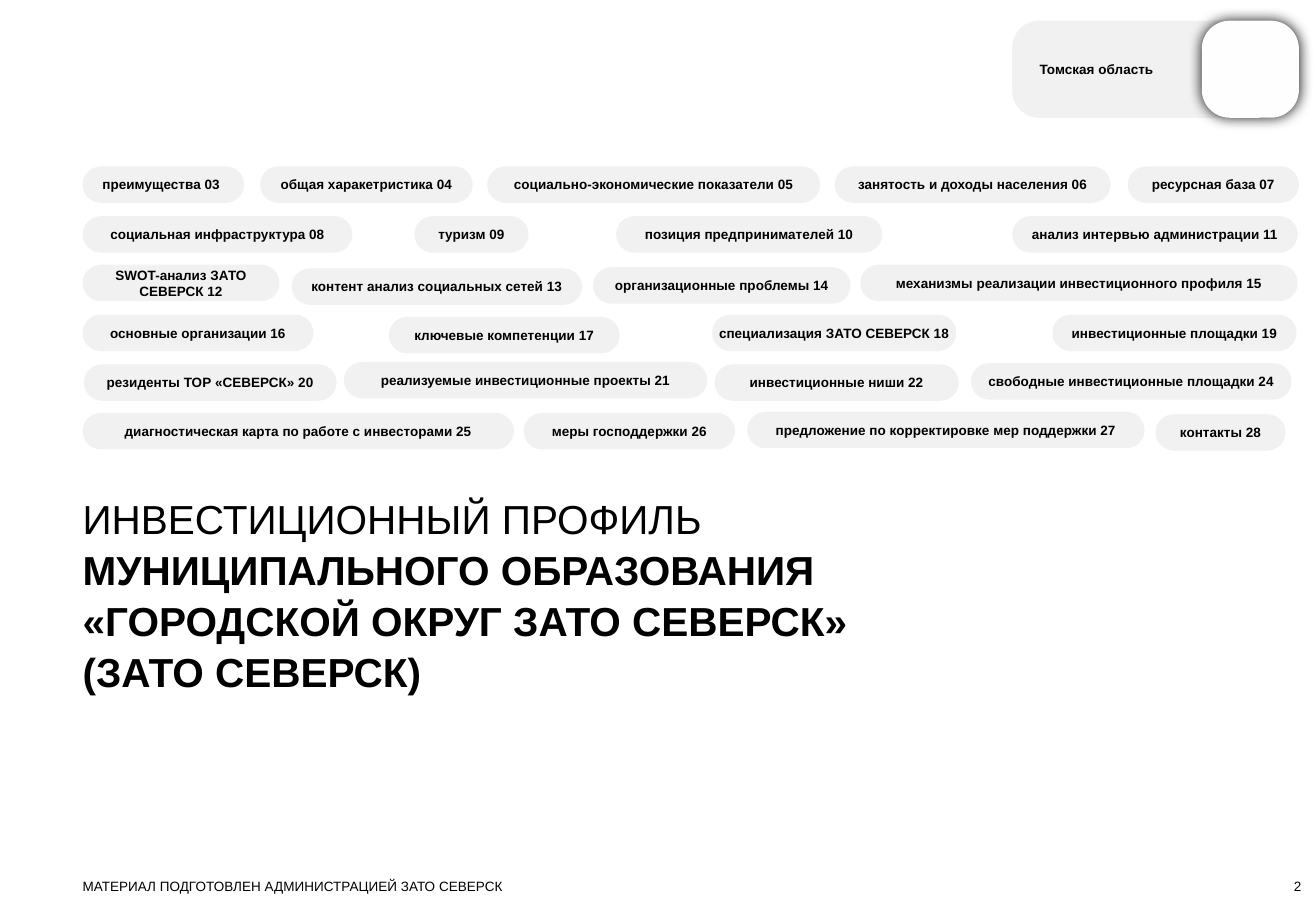
"""Builds the contents slide of a municipal investment profile."""
from dataclasses import dataclass

from lxml.etree import SubElement as Sub
from pptx import Presentation as Deck
from pptx.dml.color import RGBColor as Color
from pptx.enum.shapes import MSO_SHAPE as Shape
from pptx.enum.text import MSO_ANCHOR as Anchor, MSO_AUTO_SIZE as Fit, PP_ALIGN as Align
from pptx.oxml.ns import qn
from pptx.util import Inches, Pt


@dataclass(frozen=True)
class Theme:
    """Colours, font and type sizes."""
    font: str = "Arial"
    ink: str = "000000"
    pill: str = "F1F1F1"
    tile: str = "FEFEFE"
    small: int = 8
    large: int = 24


class Page:
    """Draws styled elements on one slide."""

    def __init__(self, deck, theme):
        """Adds a title-only slide."""
        self.theme = theme
        self.slide = deck.slides.add_slide(deck.slide_layouts[5])

    def style(self, font, size, bold):
        """Sets face, size, weight and colour."""
        font.name, font.size, font.bold = self.theme.font, Pt(size), bold
        font.color.rgb = Color.from_string(self.theme.ink)

    def frame(self, shape, anchor, pad=(0, 0, 0, 0)):
        """Sets wrapping, anchor and margins, and returns the text frame."""
        frame = shape.text_frame
        frame.word_wrap, frame.auto_size = True, Fit.NONE
        frame.vertical_anchor = anchor
        (frame.margin_left, frame.margin_top,
         frame.margin_right, frame.margin_bottom) = map(Inches, pad)
        return frame

    def fill(self, shape, text, align, anchor, bold=False, pad=(0, 0, 0, 0)):
        """Fills a shape with one small paragraph."""
        line = self.frame(shape, anchor, pad).paragraphs[0]
        line.text, line.alignment = text, align
        self.style(line.font, self.theme.small, bold)

    def block(self, box, paint, round):
        """Adds a plain rounded rectangle."""
        shape = self.slide.shapes.add_shape(Shape.ROUNDED_RECTANGLE, *map(Inches, box))
        shape.adjustments[0] = round
        shape.shadow.inherit = False
        shape.fill.solid()
        shape.fill.fore_color.rgb = Color.from_string(paint)
        shape.line.fill.background()
        return shape

    def label(self, box, text, align=Align.CENTER, pad=(0, 0, 0, 0), round=0.5):
        """Adds a grey block with a bold caption."""
        shape = self.block(box, self.theme.pill, round)
        self.fill(shape, text, align, Anchor.MIDDLE, True, pad)

    def tile(self, box, round):
        """Adds a light tile with a soft shadow."""
        shape = self.block(box, self.theme.tile, round)
        effects = shape.element.spPr.find(qn("a:effectLst"))
        shade = Sub(effects, qn("a:outerShdw"), blurRad=str(Pt(8.4)), dist="0",
                    dir="0", algn="ctr", rotWithShape="0")
        tint = Sub(shade, qn("a:srgbClr"), val=self.theme.ink)
        Sub(tint, qn("a:alpha"), val="92000")

    def note(self, box, text, align, anchor):
        """Adds a small text box."""
        shape = self.slide.shapes.add_textbox(*map(Inches, box))
        self.fill(shape, text, align, anchor)

    def title(self, box, light, strong):
        """Fills the title with a light line and a bold part."""
        shape = self.slide.shapes.title
        shape.left, shape.top, shape.width, shape.height = map(Inches, box)
        line = self.frame(shape, Anchor.TOP).paragraphs[0]
        line.alignment, line.line_spacing = Align.LEFT, 1.05
        for text, bold in ((light, False), (strong, True)):
            if bold:
                line.add_line_break()
            run = line.add_run()
            run.text = text
            self.style(run.font, self.theme.large, bold)


LEFT = 0.68
PILL = 0.3
TOPICS = [
    (2.14, 1.37, 1.75, "общая харакетристика 04"),
    (4.01, 1.37, 2.74, "социально-экономические показатели 05"),
    (6.87, 1.37, 2.27, "занятость и доходы населения 06"),
    (9.28, 1.37, 1.41, "ресурсная база 07"),
    (LEFT, 1.78, 2.22, "социальная инфраструктура 08"),
    (3.41, 1.78, 0.94, "туризм 09"),
    (5.07, 1.78, 2.19, "позиция предпринимателей 10"),
    (8.33, 1.78, 2.35, "анализ интервью администрации 11"),
    (LEFT, 2.18, 1.62, "SWOT-анализ ЗАТО СЕВЕРСК 12"),
    (2.4, 2.21, 2.39, "контент анализ социальных сетей 13"),
    (4.88, 2.2, 2.12, "организационные проблемы 14"),
    (7.08, 2.18, 3.6, "механизмы реализации инвестиционного профиля 15"),
    (LEFT, 2.59, 1.9, "основные организации 16"),
    (3.2, 2.61, 1.9, "ключевые компетенции 17"),
    (5.86, 2.59, 2.01, "специализация ЗАТО СЕВЕРСК 18"),
    (8.66, 2.59, 2.01, "инвестиционные площадки 19"),
    (0.69, 3, 2.08, "резиденты ТОР «СЕВЕРСК» 20"),
    (2.83, 2.98, 2.99, "реализуемые инвестиционные проекты 21"),
    (5.88, 3, 2.01, "инвестиционные ниши 22"),
    (7.99, 2.99, 2.64, "свободные инвестиционные площадки 24"),
    (LEFT, 3.4, 3.55, "диагностическая карта по работе с инвесторами 25"),
    (4.31, 3.4, 1.74, "меры господдержки 26"),
    (6.15, 3.39, 3.27, "предложение по корректировке мер поддержки 27"),
    (9.51, 3.41, 1.07, "контакты 28"),
]


def main():
    """Builds and saves the deck."""
    deck = Deck()
    deck.slide_width, deck.slide_height = Inches(10.83), Inches(7.5)
    page = Page(deck, Theme())
    page.title((LEFT, 4.05, 7.24, 1.62), "ИНВЕСТИЦИОННЫЙ ПРОФИЛЬ",
               "МУНИЦИПАЛЬНОГО ОБРАЗОВАНИЯ «ГОРОДСКОЙ ОКРУГ ЗАТО СЕВЕРСК» (ЗАТО СЕВЕРСК)")
    page.label((LEFT, 1.37, 1.33, PILL), "преимущества 03", Align.LEFT, (0.12, 0, 0, 0))
    for left, top, width, text in TOPICS:
        page.label((left, top, width, PILL), text)
    page.label((8.33, 0.17, 2.36, 0.8), "Томская область", Align.LEFT,
               (0.16, 0.05, 0.79, 0.05), 0.28)
    page.tile((9.89, 0.17, 0.8, 0.8), 0.29)
    page.note((LEFT, 7.23, 8, 0.13), "МАТЕРИАЛ ПОДГОТОВЛЕН АДМИНИСТРАЦИЕЙ ЗАТО СЕВЕРСК",
              Align.LEFT, Anchor.TOP)
    page.note((9.91, 7.23, 0.8, 0.13), "2", Align.RIGHT, Anchor.BOTTOM)
    deck.save("out.pptx")


if __name__ == "__main__":
    main()
